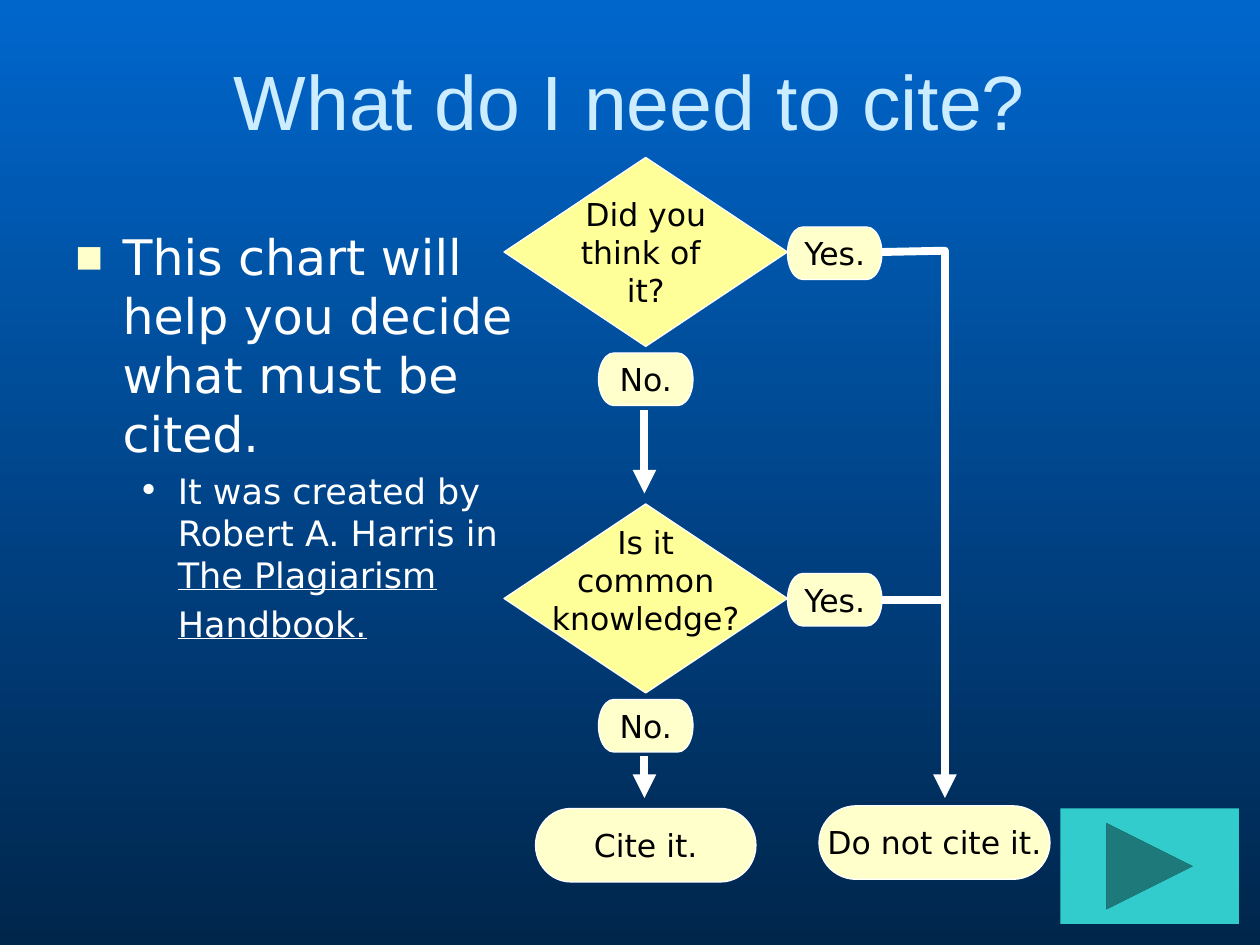
from lxml import etree
from pptx import Presentation
from pptx.dml.color import RGBColor
from pptx.enum.shapes import MSO_CONNECTOR, MSO_SHAPE
from pptx.enum.text import MSO_ANCHOR, PP_ALIGN
from pptx.oxml.ns import qn
from pptx.util import Pt

EMU_PER_PX = 9525
DECISION = MSO_SHAPE.FLOWCHART_DECISION
TERMINATOR = MSO_SHAPE.FLOWCHART_TERMINATOR
NEXT_BUTTON = MSO_SHAPE.ACTION_BUTTON_FORWARD_OR_NEXT
STRAIGHT = MSO_CONNECTOR.STRAIGHT
CENTER = PP_ALIGN.CENTER
MIDDLE = MSO_ANCHOR.MIDDLE
TOP = MSO_ANCHOR.TOP
RIGHT_SIDE = 3

COLORS = {
    "sky": "0066CC", "navy": "00264C", "title": "CCECFF", "white": "FFFFFF",
    "black": "000000", "decision": "FFFF99", "answer": "FFFFCC", "button": "33CCCC",
}


def px(*lengths):
    return [length * EMU_PER_PX for length in lengths]


def rgb(name):
    return RGBColor.from_string(COLORS[name])


def add_span(para, text, size=18, font="DejaVu Sans", color="black", underline=None):
    span = para.add_run()
    span.text = text
    span.font.size = Pt(size)
    span.font.name = font
    span.font.color.rgb = rgb(color)
    span.font.underline = underline


def set_bullet(para, symbol, color, indent, hanging, percent=100):
    properties = para._p.get_or_add_pPr()
    properties.set("marL", str(indent * EMU_PER_PX))
    properties.set("indent", str(-hanging * EMU_PER_PX))
    bullet_color = etree.SubElement(properties, qn("a:buClr"))
    etree.SubElement(bullet_color, qn("a:srgbClr"), val=COLORS[color])
    etree.SubElement(properties, qn("a:buSzPct"), val=str(percent * 1000))
    etree.SubElement(properties, qn("a:buFont"), typeface="DejaVu Sans")
    etree.SubElement(properties, qn("a:buChar"), char=symbol)


class FlowSlide:
    """Holds the slide and the shared look of the flow chart."""

    line_color = "white"
    outline_width = Pt(0.75)
    flow_width = Pt(4.5)

    def __init__(self, deck):
        self.page = deck.slides.add_slide(deck.slide_layouts[5])
        self.shapes = self.page.shapes

    def background(self, top, bottom):
        fill = self.page.background.fill
        fill.gradient()
        fill.gradient_angle = 270
        for stop, name, position in zip(fill.gradient_stops, (top, bottom), (0, 1)):
            stop.color.rgb = rgb(name)
            stop.position = position

    def title(self, text, *place):
        box = self.shapes.title
        box.left, box.top, box.width, box.height = px(*place)
        box.text_frame.vertical_anchor = MIDDLE
        para = box.text_frame.paragraphs[0]
        para.alignment = CENTER
        add_span(para, text, size=44, font="Arial", color="title")

    def bullets(self, items, *place):
        frame = self.shapes.add_textbox(*px(*place)).text_frame
        frame.word_wrap = True
        frame.vertical_anchor = TOP
        for index, (spans, bullet) in enumerate(items):
            para = frame.add_paragraph() if index else frame.paragraphs[0]
            para.space_before = Pt(4)
            set_bullet(para, **bullet)
            for text, style in spans:
                add_span(para, text, color="white", **style)

    def node(self, kind, lines, *place, fill="answer", bottom_margin=5):
        shape = self.shapes.add_shape(kind, *px(*place))
        shape.shadow.inherit = False
        shape.fill.solid()
        shape.fill.fore_color.rgb = rgb(fill)
        shape.line.color.rgb = rgb(self.line_color)
        shape.line.width = self.outline_width
        frame = shape.text_frame
        frame.word_wrap = False
        frame.vertical_anchor = MIDDLE
        frame.margin_bottom = px(bottom_margin)[0]
        for index, text in enumerate(lines):
            para = frame.add_paragraph() if index else frame.paragraphs[0]
            para.alignment = CENTER
            add_span(para, text)
        return shape

    def flow_line(self, line, arrow):
        line.color.rgb = rgb(self.line_color)
        line.width = self.flow_width
        if arrow:
            etree.SubElement(line._get_or_add_ln(), qn("a:tailEnd"), type="triangle")

    def connector(self, *ends, arrow=True, start=None):
        connector = self.shapes.add_connector(STRAIGHT, *px(*ends))
        if start is not None:
            connector.begin_connect(start, RIGHT_SIDE)
        self.flow_line(connector.line, arrow)
        etree.SubElement(connector._element.spPr, qn("a:effectLst"))

    def bent_arrow(self, start, *corners):
        builder = self.shapes.build_freeform(*start, scale=EMU_PER_PX)
        builder.add_line_segments(corners, close=False)
        shape = builder.convert_to_shape()
        shape.shadow.inherit = False
        shape.fill.background()
        self.flow_line(shape.line, arrow=True)

    def button(self, *place):
        shape = self.shapes.add_shape(NEXT_BUTTON, *px(*place))
        shape.shadow.inherit = False
        shape.fill.solid()
        shape.fill.fore_color.rgb = rgb("button")
        shape.line.fill.background()


def main():
    deck = Presentation()
    deck.slide_width, deck.slide_height = px(960, 720)
    slide = FlowSlide(deck)
    slide.background("sky", "navy")
    slide.title("What do I need to cite?", 48, 16, 864, 120)
    slide.bullets([
        ([("This chart will help you decide what must be cited.", {"size": 28})],
         {"symbol": "■", "color": "answer", "indent": 36, "hanging": 36, "percent": 60}),
        ([("It was created by Robert A. Harris in ", {"size": 20}),
          ("The Plagiarism Handbook.", {"size": 20, "underline": True}),
          (" ", {"size": 24})],
         {"symbol": "•", "color": "white", "indent": 78, "hanging": 30}),
    ], 48, 168, 352, 475)

    questions = [
        (["Did you", "think of ", "it?"], 5),
        (["Is it", "common", "knowledge?"], 33),
    ]
    for index, (lines, bottom_margin) in enumerate(questions):
        top = 120 + 264 * index
        slide.node(DECISION, lines, 384, top, 216, 144,
                   fill="decision", bottom_margin=bottom_margin)
        slide.node(TERMINATOR, ["No."], 456, top + 149, 72, 40)
        last_yes = slide.node(TERMINATOR, ["Yes."], 600, top + 53, 72, 40)
    slide.node(TERMINATOR, ["Cite it."], 408, 616, 168, 56)
    slide.node(TERMINATOR, ["Do not cite it."], 624, 614, 176, 56)

    slide.connector(491, 312, 491, 376)
    slide.connector(491, 576, 491, 608)
    slide.bent_arrow((672, 192), (720, 191), (720, 608))
    slide.connector(672, 457, 720, 457, arrow=False, start=last_yes)
    slide.button(808, 616, 136, 88)
    deck.save("out.pptx")


if __name__ == "__main__":
    main()
